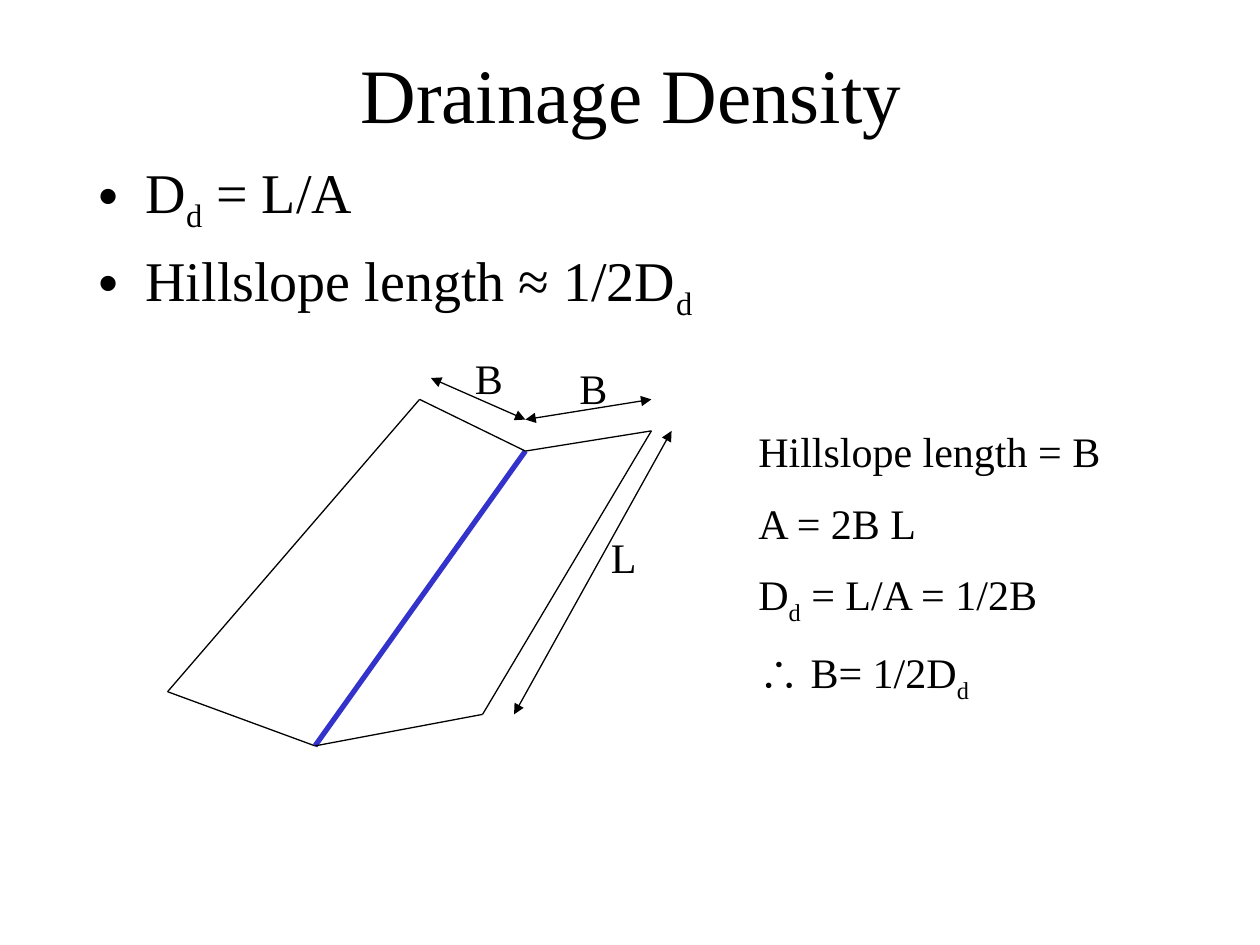
"""Build the Drainage Density slide with its hillslope diagram."""
from dataclasses import dataclass

from lxml.etree import SubElement
from pptx import Presentation
from pptx.dml.color import RGBColor
from pptx.enum.shapes import MSO_CONNECTOR as Connector
from pptx.enum.text import MSO_ANCHOR as Anchor, MSO_AUTO_SIZE as AutoSize, PP_ALIGN as Align
from pptx.oxml.ns import qn
from pptx.util import Inches, Pt


@dataclass(frozen=True)
class Theme:
    font: str = "Times New Roman"
    ink: RGBColor = RGBColor(0x00, 0x00, 0x00)
    stream: RGBColor = RGBColor(0x33, 0x33, 0xCC)
    title: int = 44
    body: int = 32
    note: int = 24
    thin: float = 0.75
    thick: float = 3


theme = Theme()


def write(frame, text, *, size, align=Align.LEFT, anchor=Anchor.TOP, fit=AutoSize.NONE, before=20):
    """Fill a frame line by line, lowering the parts between bars to subscripts."""
    frame.word_wrap = True
    frame.auto_size = fit
    frame.vertical_anchor = anchor
    for number, line in enumerate(text.split("\n")):
        paragraph = frame.add_paragraph() if number else frame.paragraphs[0]
        paragraph.alignment = align
        spacing = SubElement(paragraph._p.get_or_add_pPr(), qn("a:spcBef"))
        SubElement(spacing, qn("a:spcPct")).set("val", str(before * 1000))
        for part, words in enumerate(line.split("|")):
            if not words:
                continue
            run = paragraph.add_run()
            run.text = words
            run.font.name = theme.font
            run.font.size = Pt(size)
            run.font.color.rgb = theme.ink
            if part % 2:
                run._r.get_or_add_rPr().set("baseline", "-25000")


def draw_line(start, end, color=theme.ink, width=theme.thin, arrows=False):
    """Draw a straight line between two points given in inches."""
    ends = [Inches(value) for value in (*start, *end)]
    edge = slide.shapes.add_connector(Connector.STRAIGHT, *ends)
    edge.line.color.rgb = color
    edge.line.width = Pt(width)
    if arrows:
        outline = edge.line._get_or_add_ln()
        for tip in ("a:headEnd", "a:tailEnd"):
            SubElement(outline, qn(tip)).set("type", "triangle")
    SubElement(edge._element.spPr, qn("a:effectLst"))


deck = Presentation()
deck.slide_width, deck.slide_height = Inches(10), Inches(7.5)
slide = deck.slides.add_slide(deck.slide_layouts[1])

heading = slide.shapes.title
heading.left, heading.top = Inches(0.76), Inches(0.23)
heading.width, heading.height = Inches(8.5), Inches(1.01)
write(heading.text_frame, "Drainage Density", size=theme.title,
      align=Align.CENTER, anchor=Anchor.MIDDLE, before=0)

definitions = slide.placeholders[1]
definitions.left, definitions.top = Inches(0.68), Inches(1.2)
definitions.width, definitions.height = Inches(8.5), Inches(1.32)
write(definitions.text_frame, "D|d| = L/A\nHillslope length ≈ 1/2D|d", size=theme.body)

left_foot, left_top = (1.33, 5.49), (3.33, 3.17)
stream_foot, stream_top = (2.5, 5.92), (4.17, 3.58)
right_foot, right_top = (3.83, 5.67), (5.17, 3.42)

draw_line(left_foot, left_top)
draw_line(left_foot, stream_foot)
draw_line(stream_foot, stream_top, color=theme.stream, width=theme.thick)
for start, end in [
    (left_top, stream_top),
    (stream_foot, right_foot),
    (right_foot, right_top),
    (stream_top, right_top),
]:
    draw_line(start, end)

stream_mark = (4.17, 3.33)
for start, end in [
    ((3.42, 3), stream_mark),
    (stream_mark, (5.17, 3.17)),
    ((4.08, 5.67), (5.33, 3.42)),
]:
    draw_line(start, end, arrows=True)

derivation = "Hillslope length = B\nA = 2B L\nD|d| = L/A = 1/2B\n∴ B= 1/2D|d"
for text, left, top, width, height in [
    ("L", 4.75, 4.17, 0.5, 0.5),
    ("B", 4.5, 2.83, 0.5, 0.5),
    ("B", 3.67, 2.75, 0.5, 0.5),
    (derivation, 5.92, 3.33, 3.5, 2.3),
]:
    label = slide.shapes.add_textbox(Inches(left), Inches(top), Inches(width), Inches(height))
    write(label.text_frame, text, size=theme.note, fit=AutoSize.SHAPE_TO_FIT_TEXT, before=50)

deck.save("out.pptx")
